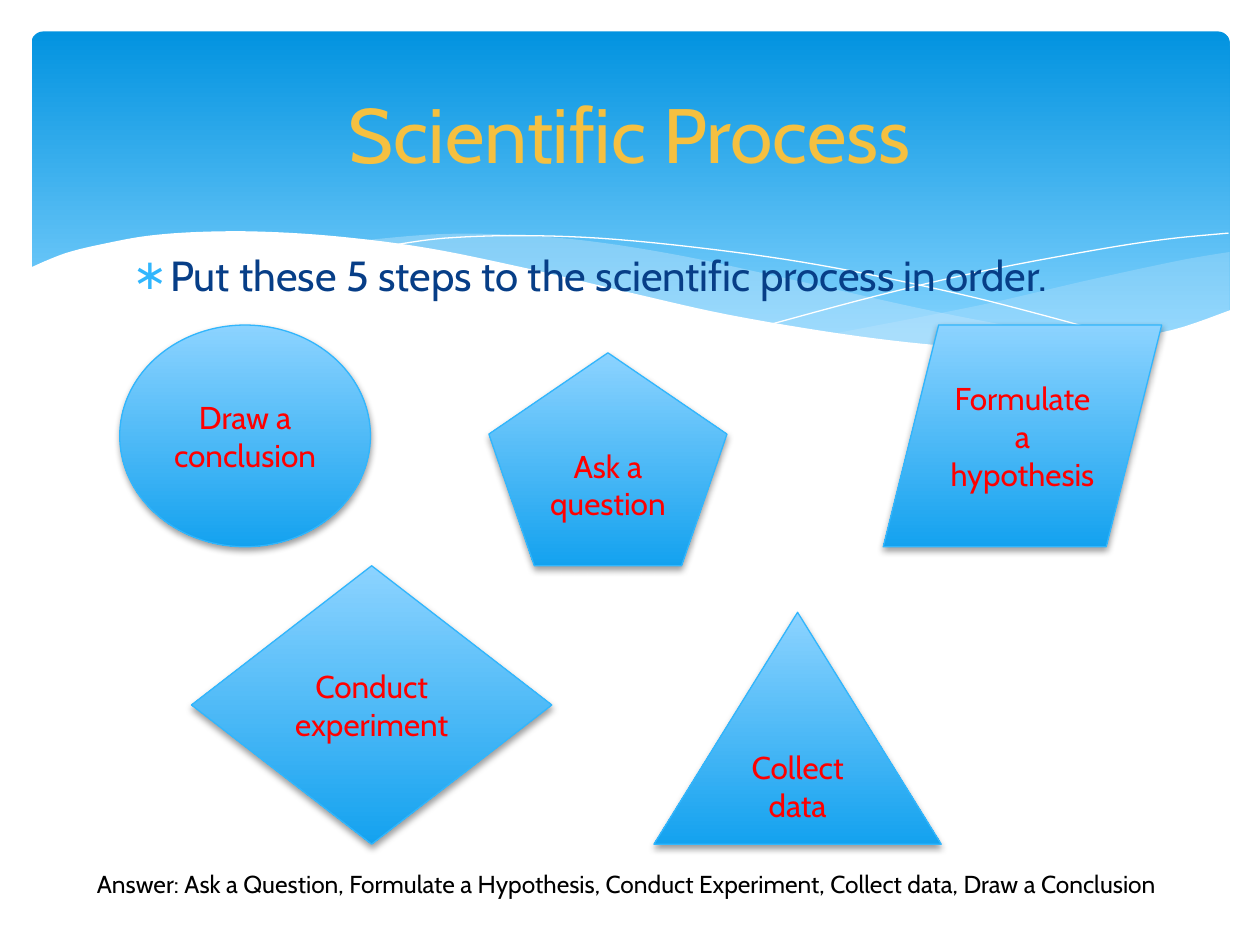
from dataclasses import dataclass

from lxml import etree
from pptx import Presentation
from pptx import util as u
from pptx.dml.color import RGBColor
from pptx.enum import shapes, text
from pptx.oxml import ns

COLUMNS, ROWS = 100, 75
CELL = u.Inches(10) // COLUMNS
FONT = "Cabin"

WHITE = RGBColor(0xFF, 0xFF, 0xFF)
BLACK = RGBColor(0x00, 0x00, 0x00)
RED = RGBColor(0xFF, 0x00, 0x00)
GOLD = RGBColor(0xF5, 0xC0, 0x40)
NAVY = RGBColor(0x07, 0x3E, 0x87)
SKY = RGBColor(0x31, 0xB6, 0xFD)
PALE = RGBColor(0xC6, 0xE7, 0xFC)
BANNER_TOP = RGBColor(0x02, 0x93, 0xE0)
BANNER_BOTTOM = RGBColor(0x83, 0xD3, 0xFE)
STEP_TOP = RGBColor(0x8C, 0xD3, 0xFF)
STEP_BOTTOM = RGBColor(0x14, 0xA2, 0xEF)

WAVE_BACK_TOP = [(97.6, 20), (93.5, 20.7), (86.1, 22.3), (77.9, 24.2), (66.1, 26.5)]
WAVE_BACK_BOTTOM = [(66.1, 26.5), (71.9, 27.2), (76.9, 27.7), (81.4, 27.8),
                    (86.3, 27.5), (90.5, 26.9), (94.2, 25.9), (97.6, 24.7)]
WAVE_MIDDLE_TOP = [(89.3, 27.3), (83.7, 26.5), (74.1, 24.7), (62.9, 22.2), (54.1, 20.3),
                   (46.5, 19.1), (39.9, 18.6), (34.4, 18.6), (28.6, 19.1)]
WAVE_MIDDLE_BOTTOM = [(28.6, 19.1), (36.2, 20.3), (44.9, 22.2), (56.6, 24.8), (65, 26.4),
                      (72.2, 27.4), (78.5, 27.8), (83.8, 27.8), (89.3, 27.3)]
CREST_FALLING = [(30.9, 19.5), (35.3, 18.9), (41.6, 18.7), (48.9, 19), (58.2, 20),
                 (66.5, 21.3), (76, 23.3), (83.1, 25.1), (90.7, 27.2)]
CREST_RISING = [(61.3, 25.7), (69.5, 23.5), (77.6, 21.6), (86.6, 19.9), (92.4, 19),
                (97.5, 18.5)]
WAVE_FRONT = [(97.7, 24.6), (93, 26.2), (87.5, 27.1), (80.9, 27.7), (74.4, 27.4),
              (66.8, 26.5), (57.9, 25), (50.3, 23.3), (41.8, 21.3), (34, 19.7),
              (27.1, 18.8), (21.1, 18.4), (16.1, 18.4), (11.9, 18.7), (8.5, 19.3),
              (5.2, 20.1), (2.3, 21.3)]

STEPS = [
    (shapes.MSO_SHAPE.OVAL, (0, 0, 19.9, 17.6), ["Draw a conclusion"]),
    (shapes.MSO_SHAPE.DIAMOND, (5.7, 19.1, 28.6, 22.1), ["Conduct experiment"]),
    (shapes.MSO_SHAPE.REGULAR_PENTAGON, (29.3, 2.2, 18.9, 16.9), ["Ask a question"]),
    (shapes.MSO_SHAPE.ISOSCELES_TRIANGLE, (42.4, 22.8, 22.8, 18.4), ["Collect data"]),
    (shapes.MSO_SHAPE.PARALLELOGRAM, (60.6, 0, 22.1, 17.6),
     ["Formulate", "a", "hypothesis"]),
]


@dataclass
class Box:
    left: float
    top: float
    width: float
    height: float

    def inner(self, left, top, width, height):
        return Box(self.left + left, self.top + top, width, height)

    def point(self, column, row):
        return round((self.left + column) * CELL), round((self.top + row) * CELL)

    def lengths(self):
        return [round(cells * CELL)
                for cells in (self.left, self.top, self.width, self.height)]


def add_xml(parent, tag, **attributes):
    return etree.SubElement(parent, ns.qn(tag), attributes)


def write_text(frame, lines, size, color, align=text.PP_ALIGN.LEFT,
               anchor=text.MSO_ANCHOR.TOP):
    frame.word_wrap = True
    frame.vertical_anchor = anchor
    frame.text = "\n".join(lines)
    for paragraph in frame.paragraphs:
        paragraph.alignment = align
        font = paragraph.runs[0].font
        font.name, font.size = FONT, u.Pt(size)
        font.color.rgb = color


def fill_gradient(shape, *stops):
    shape.fill.gradient()
    shape.fill.gradient_angle = 270
    for stop, (position, color) in zip(shape.fill.gradient_stops, stops):
        stop.position, stop.color.rgb = position, color


def smooth(points, pieces=6):
    padded = [points[0], *points, points[-1]]
    curve = [points[0]]
    for a, b, c, d in zip(padded, padded[1:], padded[2:], padded[3:]):
        for piece in range(1, pieces + 1):
            t = piece / pieces
            curve.append(tuple(
                q + t / 2 * (r - p + t * (2 * p - 5 * q + 4 * r - s
                                          + t * (3 * (q - r) + s - p)))
                for p, q, r, s in zip(a, b, c, d)))
    return curve


def add_outline(slide, box, points, fill=None, alpha=100):
    start, *rest = [box.point(*point) for point in points]
    builder = slide.shapes.build_freeform(*start)
    builder.add_line_segments(rest, close=fill is not None)
    shape = builder.convert_to_shape()
    shape.shadow.inherit = False
    if fill is None:
        shape.fill.background()
        shape.line.color.rgb = WHITE
        shape.line.width = u.Pt(0)
    else:
        shape.fill.solid()
        shape.fill.fore_color.rgb = fill
        shape.line.fill.background()
        if alpha < 100:
            color = shape._element.spPr.find(".//" + ns.qn("a:srgbClr"))
            add_xml(color, "a:alpha", val=str(alpha * 1000))


def add_backdrop(slide, box):
    banner = slide.shapes.add_shape(shapes.MSO_SHAPE.ROUNDED_RECTANGLE,
                                    *box.inner(2.5, 2.5, 95.1, 27).lengths())
    banner.adjustments[0] = 0.034
    banner.shadow.inherit = False
    banner.line.fill.background()
    fill_gradient(banner, (0, BANNER_TOP), (0.9, BANNER_BOTTOM))
    add_outline(slide, box, smooth(WAVE_BACK_TOP) + smooth(WAVE_BACK_BOTTOM), PALE, 29)
    add_outline(slide, box, smooth(WAVE_MIDDLE_TOP) + smooth(WAVE_MIDDLE_BOTTOM), PALE, 40)
    for crest in (CREST_FALLING, CREST_RISING):
        add_outline(slide, box, smooth(crest))
    add_outline(slide, box, smooth(WAVE_FRONT) + [(2.3, 32.9), (97.7, 32.9)], WHITE)


def place(shape, box):
    shape.left, shape.top, shape.width, shape.height = box.lengths()
    shape._element.getparent().append(shape._element)


def add_instruction(slide, box):
    body = slide.placeholders[1]
    place(body, box)
    write_text(body.text_frame, ["Put these 5 steps to the scientific process in order."],
               24, NAVY)
    paragraph = body.text_frame.paragraphs[0]
    paragraph.space_before = u.Pt(4.8)
    properties = paragraph._p.get_or_add_pPr()
    properties.set("marL", str(u.Inches(0.3)))
    properties.set("indent", str(-u.Inches(0.3)))
    add_xml(add_xml(properties, "a:buClr"), "a:srgbClr", val=str(SKY))
    add_xml(properties, "a:buFont", typeface=FONT)
    add_xml(properties, "a:buChar", char="∗")


def add_title(slide, box):
    title = slide.shapes.title
    place(title, box)
    write_text(title.text_frame, ["Scientific Process"], 44, GOLD,
               align=text.PP_ALIGN.CENTER, anchor=text.MSO_ANCHOR.MIDDLE)


def add_steps(slide, box):
    for kind, cells, lines in STEPS:
        step = slide.shapes.add_shape(kind, *box.inner(*cells).lengths())
        fill_gradient(step, (0, STEP_TOP), (1, STEP_BOTTOM))
        step.line.color.rgb = SKY
        step.line.width = u.Pt(0.75)
        step.shadow.inherit = False
        effects = step._element.spPr.find(ns.qn("a:effectLst"))
        shadow = add_xml(effects, "a:outerShdw", blurRad=str(u.Pt(4)), dist=str(u.Pt(2)),
                         dir="5400000", rotWithShape="0")
        add_xml(add_xml(shadow, "a:srgbClr", val=str(BLACK)), "a:alpha", val="38000")
        write_text(step.text_frame, lines, 18, RED,
                   align=text.PP_ALIGN.CENTER, anchor=text.MSO_ANCHOR.MIDDLE)


def add_answer(slide, box):
    answer = slide.shapes.add_textbox(*box.lengths())
    write_text(answer.text_frame,
               ["Answer: Ask a Question, Formulate a Hypothesis, Conduct Experiment, "
                "Collect data, Draw a Conclusion"], 14, BLACK)
    answer.text_frame.auto_size = text.MSO_AUTO_SIZE.SHAPE_TO_FIT_TEXT


def main():
    presentation = Presentation()
    presentation.slide_width, presentation.slide_height = COLUMNS * CELL, ROWS * CELL
    slide = presentation.slides.add_slide(presentation.slide_layouts[1])
    add_backdrop(slide, Box(0, 0, COLUMNS, ROWS))
    add_instruction(slide, Box(9.5, 19.3, 81, 47.7))
    add_title(slide, Box(5, 3.7, 90, 13.7))
    add_steps(slide, Box(9.5, 25.8, 82.7, 41.2))
    add_answer(slide, Box(6.7, 68.5, 88.3, 3.4))
    presentation.save("out.pptx")


if __name__ == "__main__":
    main()
